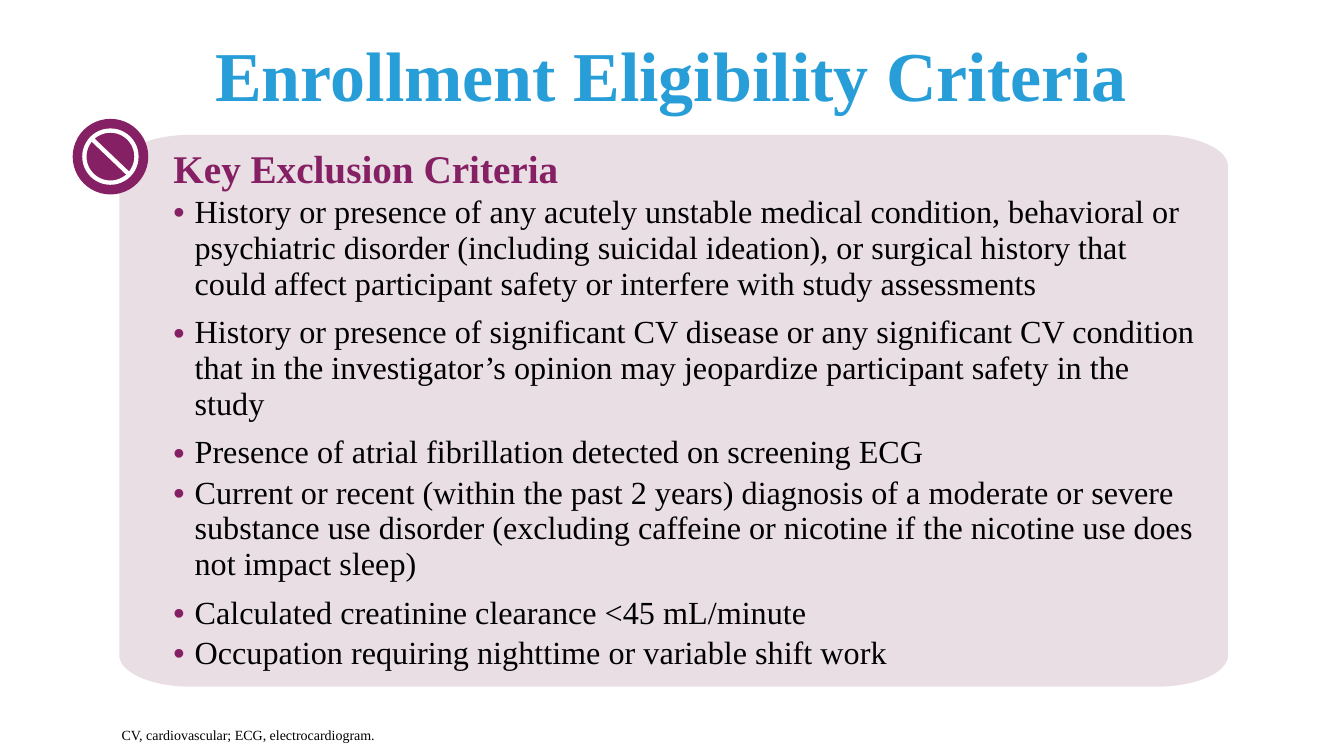
import math
from lxml import etree
from pptx import Presentation, util as u
from pptx.dml.color import RGBColor
from pptx.enum import shapes, text
from pptx.oxml.ns import qn

THEME = {
    "font": "Times New Roman",
    "blue": RGBColor.from_string("289ED8"),
    "plum": RGBColor.from_string("852064"),
    "panel": RGBColor.from_string("E9DEE4"),
    "white": RGBColor.from_string("FFFFFF"),
    "black": RGBColor.from_string("000000"),
    "title": 50, "heading": 28, "body": 23, "note": 10, "stroke": 3.05,
}
NO_GRID_STYLE = "{2D5ABB26-0587-4C30-8999-92F81FD0307C}"

prs = Presentation()
prs.slide_width, prs.slide_height = u.Inches(13.333), u.Inches(7.5)
s = prs.slides.add_slide(prs.slide_layouts[6])

# Grid of 160 columns by 90 rows
COL, ROW = prs.slide_width / 160, prs.slide_height / 90


def grid(x, y, *size):
    """Turn columns and rows into slide lengths."""
    return [round(n * (ROW if i % 2 else COL)) for i, n in enumerate((x, y, *size))]


def write(p, words, size, color, bold=False):
    r = p.add_run()
    r.text = words
    r.font.name, r.font.size, r.font.bold = THEME["font"], u.Pt(THEME[size]), bold
    r.font.color.rgb = THEME[color]


# Title and footnote
for box, words, size, color, bold, align, anchor in (
    ((11, 0, 138, 17.4), "Enrollment Eligibility Criteria", "title", "blue", True,
     text.PP_ALIGN.CENTER, text.MSO_ANCHOR.MIDDLE),
    ((13.3, 85.9, 142.8, 3.2), "CV, cardiovascular; ECG, electrocardiogram.", "note",
     "black", False, text.PP_ALIGN.LEFT, text.MSO_ANCHOR.TOP),
):
    tf = s.shapes.add_textbox(*grid(*box)).text_frame
    tf.word_wrap, tf.vertical_anchor = True, anchor
    p = tf.paragraphs[0]
    p.alignment = align
    write(p, words, size, color, bold)

# Panel with elliptical corners, one quarter arc per corner
left, top, right, bottom = 14.2, 16.05, 146.2, 81.75
rx, ry, steps = 8.5, 3.75, 16
outline = []
corners = ((right - rx, bottom - ry), (left + rx, bottom - ry),
           (left + rx, top + ry), (right - rx, top + ry))
for quarter, (cx, cy) in enumerate(corners):
    for step in range(steps + 1):
        angle = (quarter + step / steps) * math.pi / 2
        outline.append(grid(cx + rx * math.cos(angle), cy + ry * math.sin(angle)))
builder = s.shapes.build_freeform(*outline[0])
builder.add_line_segments(outline[1:], close=True)
panel = builder.convert_to_shape()
panel.shadow.inherit = False
panel.fill.solid()
panel.fill.fore_color.rgb = THEME["panel"]
panel.line.fill.background()

# Prohibition badge: disc, ring and slash
cx, cy = 13.15, 18.65
for radius, ringed in ((4.5, False), (3.1, True)):
    sp = s.shapes.add_shape(shapes.MSO_SHAPE.OVAL,
                            *grid(cx - radius, cy - radius, 2 * radius, 2 * radius))
    sp.shadow.inherit = False
    sp.fill.solid()
    sp.fill.fore_color.rgb = THEME["plum"]
    if ringed:
        sp.line.color.rgb, sp.line.width = THEME["white"], u.Pt(THEME["stroke"])
    else:
        sp.line.fill.background()
slash = s.shapes.add_connector(shapes.MSO_CONNECTOR.STRAIGHT,
                               *grid(cx - 2.2, cy - 2.1, cx + 2.2, cy + 2.1))
slash.line.color.rgb, slash.line.width = THEME["white"], u.Pt(THEME["stroke"])
etree.SubElement(slash.element.spPr, qn("a:effectLst"))

# Criteria table: heading row, then one bulleted criterion per row
SHORT, TALL = 4.8, 14.3
rows = (
    (4.7, "Key Exclusion Criteria"),
    (TALL, "History or presence of any acutely unstable medical condition, behavioral or "
           "psychiatric disorder (including suicidal ideation), or surgical history that "
           "could affect participant safety or interfere with study assessments"),
    (TALL, "History or presence of significant CV disease or any significant CV condition "
           "that in the investigator’s opinion may jeopardize participant safety in the study"),
    (SHORT, "Presence of atrial fibrillation detected on screening ECG"),
    (TALL, "Current or recent (within the past 2 years) diagnosis of a moderate or severe "
           "substance use disorder (excluding caffeine or nicotine if the nicotine use does "
           "not impact sleep)"),
    (SHORT, "Calculated creatinine clearance <45 mL/minute"),
    (SHORT, "Occupation requiring nighttime or variable shift work"),
)
frame = s.shapes.add_table(len(rows), 1,
                           *grid(20.65, 18.5, 121.9, sum(height for height, _ in rows)))
table = frame.table
table.first_row = table.horz_banding = False
table._tbl.tblPr.find(qn("a:tableStyleId")).text = NO_GRID_STYLE
for i, (height, words) in enumerate(rows):
    table.rows[i].height = round(height * ROW)
    cell = table.cell(i, 0)
    cell.fill.background()
    cell.margin_left = cell.margin_right = cell.margin_top = cell.margin_bottom = 0
    p = cell.text_frame.paragraphs[0]
    if i == 0:
        p.line_spacing = 0.8
        write(p, words, "heading", "plum", True)
        continue
    pPr = p._p.get_or_add_pPr()
    indent = u.Inches(0.21)
    pPr.set("marL", str(indent))
    pPr.set("indent", str(-indent))
    color = etree.SubElement(pPr, qn("a:buClr"))
    etree.SubElement(color, qn("a:srgbClr"), val=str(THEME["plum"]))
    etree.SubElement(pPr, qn("a:buFont"), typeface="Arial")
    etree.SubElement(pPr, qn("a:buChar"), char="•")
    write(p, words, "body", "black")

prs.save("out.pptx")
